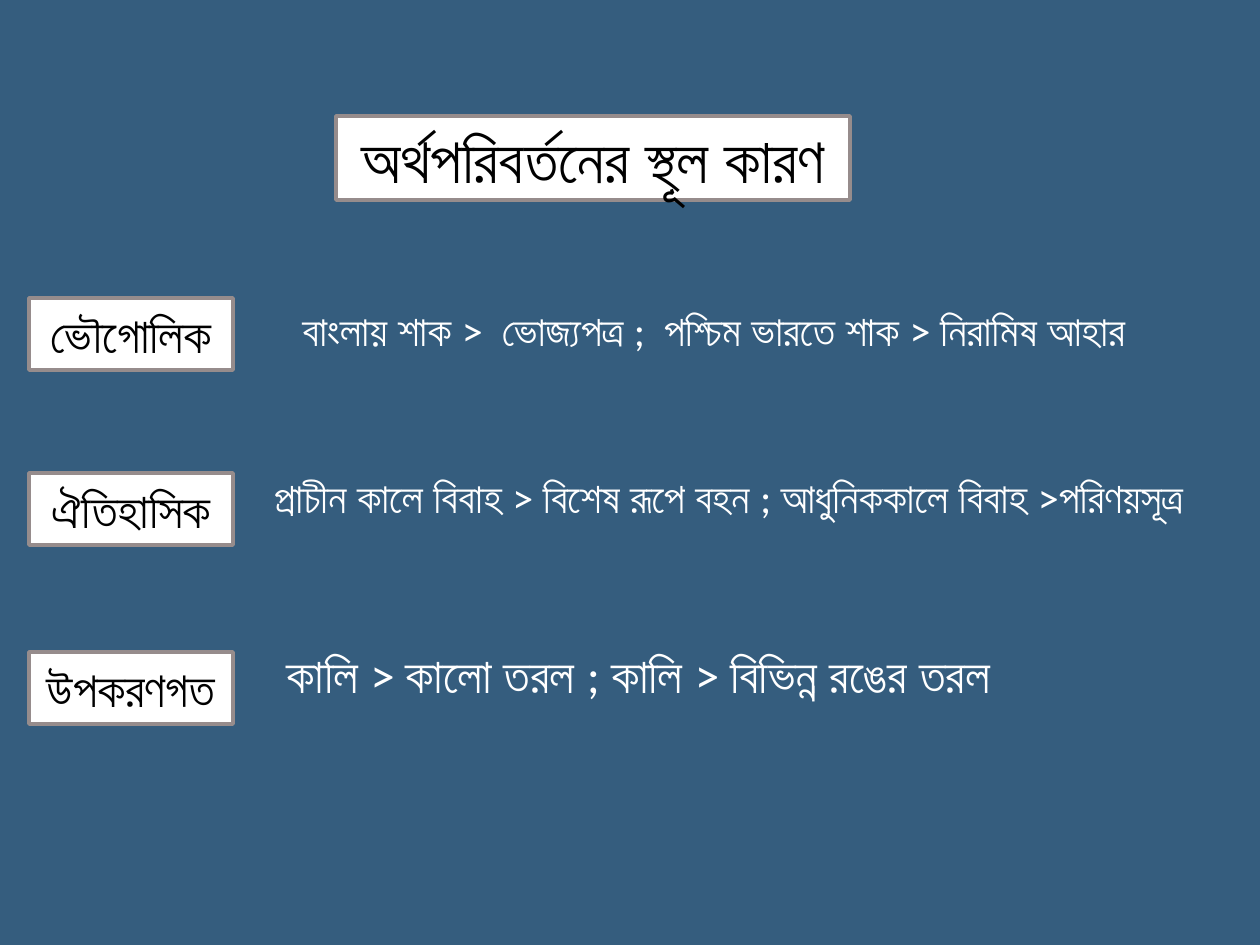
"""Build a slide on the broad causes of meaning change in Bengali."""
from pptx import Presentation
from pptx.dml.color import RGBColor
from pptx.enum.shapes import MSO_SHAPE
from pptx.enum.text import MSO_ANCHOR, MSO_AUTO_SIZE, PP_ALIGN
from pptx.util import Emu, Pt

BLUE = RGBColor(0x35, 0x5D, 0x7E)
WHITE = RGBColor(0xFF, 0xFF, 0xFF)
BLACK = RGBColor(0, 0, 0)
GREY = RGBColor(0x96, 0x8C, 0x8C)

TITLE = "অর্থপরিবর্তনের স্থূল কারণ"
CAUSES = [
    dict(label="ভৌগোলিক", top=298, word="শাক", size=24, box=(290, 298, 927, 63),
         example="বাংলায় শাক >  ভোজ্যপত্র ;  পশ্চিম ভারতে শাক > নিরামিষ আহার"),
    dict(label="ঐতিহাসিক", top=473, word="বিবাহ", size=24, box=(262, 465, 998, 63),
         example="প্রাচীন কালে বিবাহ > বিশেষ রূপে বহন ; আধুনিককালে বিবাহ >পরিণয়সূত্র"),
    dict(label="উপকরণগত", top=652, word="কালি", size=28, box=(262, 638, 927, 72),
         example=" কালি > কালো তরল ; কালি > বিভিন্ন রঙের তরল"),
]
LABEL_LEFT, LABEL_W, LABEL_H = 29, 204, 72


def px(n):
    return Emu(round(n * 914400 / 126))


def write(tf, text, size, color, align=PP_ALIGN.LEFT, bold_word=None):
    tf.word_wrap = True
    p = tf.paragraphs[0]
    p.alignment = align
    parts = text.split(bold_word) if bold_word else [text]
    runs = [(parts[0], False)]
    for part in parts[1:]:
        runs += [(bold_word, True), (part, False)]
    for words, bold in runs:
        if words:
            r = p.add_run()
            r.text = words
            r.font.name = "Calibri"
            r.font.size = Pt(size)
            r.font.bold = bold
            r.font.color.rgb = color


def add_box(s, text, at, size):
    sp = s.shapes.add_shape(MSO_SHAPE.FLOWCHART_PROCESS, *map(px, at))
    sp.shadow.inherit = False
    sp.fill.solid()
    sp.fill.fore_color.rgb = WHITE
    sp.line.color.rgb = GREY
    sp.line.width = Pt(2)
    sp.text_frame.vertical_anchor = MSO_ANCHOR.MIDDLE
    write(sp.text_frame, text, size, BLACK, align=PP_ALIGN.CENTER)


def main():
    prs = Presentation()
    prs.slide_width, prs.slide_height = px(1260), px(945)
    s = prs.slides.add_slide(prs.slide_layouts[6])
    s.background.fill.solid()
    s.background.fill.fore_color.rgb = BLUE

    add_box(s, TITLE, (336, 116, 514, 84), 36)
    for cause in CAUSES:
        add_box(s, cause["label"], (LABEL_LEFT, cause["top"], LABEL_W, LABEL_H), 28)
    for cause in CAUSES:
        tf = s.shapes.add_textbox(*map(px, cause["box"])).text_frame
        tf.auto_size = MSO_AUTO_SIZE.SHAPE_TO_FIT_TEXT
        write(tf, cause["example"], cause["size"], WHITE, bold_word=cause["word"])

    prs.save("out.pptx")


if __name__ == "__main__":
    main()
